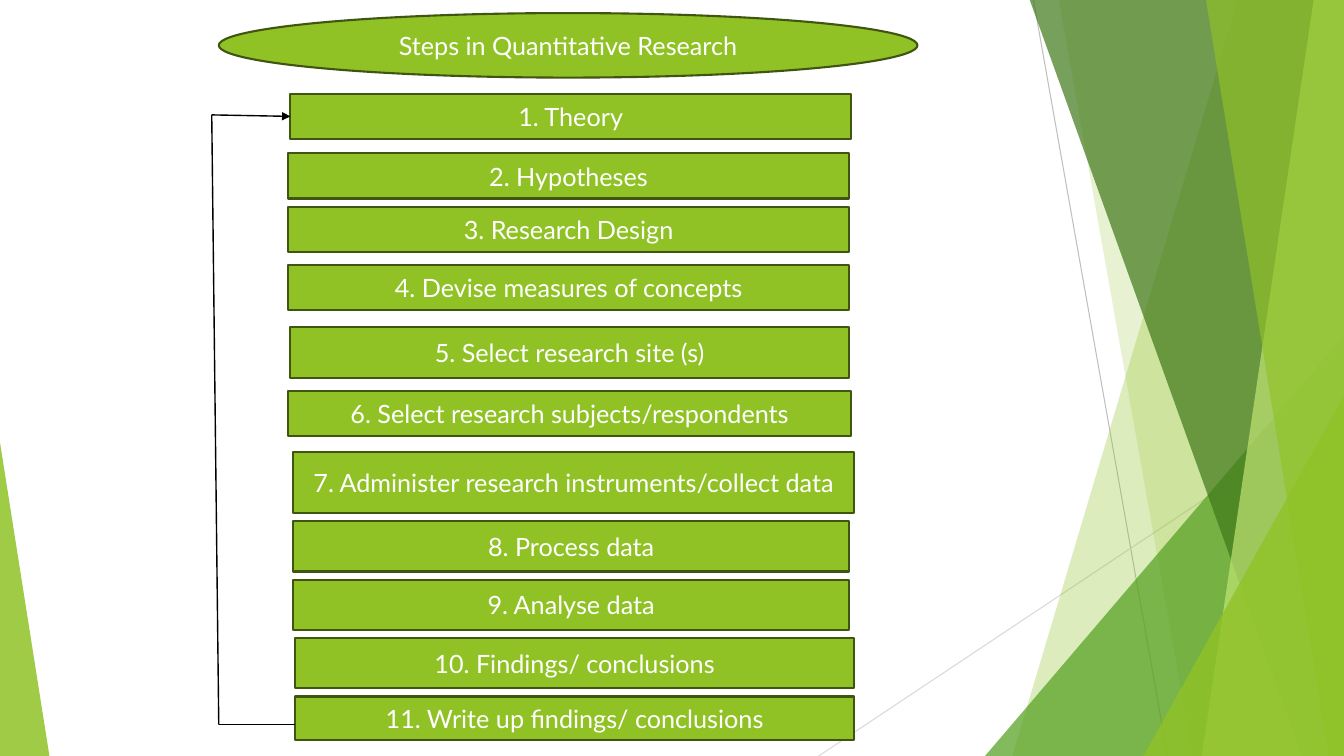
from lxml import etree
from pptx import Presentation
from pptx.dml.color import RGBColor
from pptx.enum.shapes import MSO_CONNECTOR, MSO_SHAPE
from pptx.enum.text import MSO_ANCHOR, PP_ALIGN
from pptx.oxml.ns import qn
from pptx.util import Inches, Pt

# Grid: 1333 columns by 750 rows, each cell a hundredth of an inch
CELL = Inches(0.01)
COLUMNS, ROWS = 1333, 750

COLORS = {
    "lime": "90C226", "green": "54A021", "forest": "3F7819", "pale": "C0E474",
    "outline": "3F5511", "text": "FFFFFF", "arrow": "000000",
    "steep ray": "BFBFBF", "low ray": "D9D9D9",
}
FONT = "Lato"

TITLE = ("Steps in Quantitative Research", (217, 13, 693, 64))

# Step, then left, top, width, height
STEPS = [
    ("1. Theory", (288, 93, 556, 45)),
    ("2. Hypotheses", (286, 152, 556, 45)),
    ("3. Research Design", (286, 205, 556, 45)),
    ("4. Devise measures of concepts", (286, 263, 556, 45)),
    ("5. Select research site (s)", (288, 324, 554, 51)),
    ("6. Select research subjects/respondents", (286, 388, 558, 45)),
    ("7. Administer research instruments/collect data", (291, 448, 556, 61)),
    ("8. Process data", (291, 517, 551, 50)),
    ("9. Analyse data", (291, 575, 551, 50)),
    ("10. Findings/ conclusions", (293, 633, 554, 50)),
    ("11. Write up findings/ conclusions", (293, 691, 554, 43)),
]

# Start, end, colour
RAYS = [
    ((1025, 0), (1158, ROWS), "steep ray"),
    ((COLUMNS, 403), (812, ROWS), "low ray"),
]

# Bands reach the right edge: (kind, top column, bottom column, colour, opacity)
# Triangles stand on the bottom edge: (kind, left, top, width, apex, colour, opacity)
FACETS = [
    ("band", 1228, 1004, "lime", 30),
    ("band", 1050, 1183, "lime", 20),
    ("triangle", 977, 333, 356, 1, "green", 72),
    ("band", 1021, 1291, "forest", 70),
    ("band", 1303, 1192, "pale", 70),
    ("band", 1196, 1318, "lime", 65),
    ("triangle", 1134, 393, 199, 1, "lime", 80),
    ("triangle", 0, 439, 49, 0, "lime", 85),
]

# Corners of the loop from the last step back to the first
LOOP_TOP, LOOP_BOTTOM, LOOP_END = (210, 114), (217, 719), (293, 719)


def rgb(name):
    return RGBColor.from_string(COLORS[name])


def cells(*counts):
    return [count * CELL for count in counts]


def paint(shape, color, opacity=100):
    shape.shadow.inherit = False
    shape.fill.solid()
    shape.fill.fore_color.rgb = rgb(color)
    if opacity < 100:
        fill_color = shape.fill._xPr.find(qn("a:solidFill"))[0]
        etree.SubElement(fill_color, qn("a:alpha"), val=str(opacity * 1000))


def add_band(page, top, bottom, color, opacity):
    builder = page.shapes.build_freeform(top, -1, scale=CELL)
    builder.add_line_segments([(COLUMNS, -1), (COLUMNS, ROWS), (bottom, ROWS)], close=True)
    band = builder.convert_to_shape()
    paint(band, color, opacity)
    band.line.fill.background()


def add_triangle(page, left, top, width, apex, color, opacity):
    triangle = page.shapes.add_shape(
        MSO_SHAPE.ISOSCELES_TRIANGLE, *cells(left, top, width, ROWS - top))
    triangle.adjustments[0] = apex
    paint(triangle, color, opacity)
    triangle.line.fill.background()


def add_line(page, start, end, color, width, arrow=False):
    line = page.shapes.add_connector(MSO_CONNECTOR.STRAIGHT, *cells(*start, *end))
    line.line.color.rgb = rgb(color)
    line.line.width = Pt(width)
    if arrow:
        etree.SubElement(line.line._get_or_add_ln(), qn("a:tailEnd"), type="triangle")
    etree.SubElement(line._element.spPr, qn("a:effectLst"))
    return line


def write(shape, text, size=18, color="text", align=PP_ALIGN.CENTER):
    frame = shape.text_frame
    frame.word_wrap = True
    frame.vertical_anchor = MSO_ANCHOR.MIDDLE
    para = frame.paragraphs[0]
    para.alignment = align
    span = para.add_run()
    span.text = text
    span.font.name = FONT
    span.font.size = Pt(size)
    span.font.color.rgb = rgb(color)


def add_box(page, kind, text, place):
    box = page.shapes.add_shape(kind, *cells(*place))
    paint(box, "lime")
    box.line.color.rgb = rgb("outline")
    box.line.width = Pt(1.5)
    write(box, text)
    return box


def main():
    deck = Presentation()
    deck.slide_width, deck.slide_height = cells(COLUMNS, ROWS)
    page = deck.slides.add_slide(deck.slide_layouts[6])

    # Backdrop of rays and facets
    for start, end, color in RAYS:
        add_line(page, start, end, color, 0.75)
    for kind, *facet in FACETS:
        if kind == "band":
            add_band(page, *facet)
        else:
            add_triangle(page, *facet)

    # Title and steps
    add_box(page, MSO_SHAPE.OVAL, *TITLE)
    boxes = [add_box(page, MSO_SHAPE.RECTANGLE, *step) for step in STEPS]

    # Loop back to the first step
    first = STEPS[0][1]
    arrow = add_line(page, LOOP_TOP, (first[0], 115), "arrow", 1, arrow=True)
    arrow.end_connect(boxes[0], 1)
    add_line(page, LOOP_TOP, LOOP_BOTTOM, "arrow", 1)
    add_line(page, LOOP_BOTTOM, LOOP_END, "arrow", 1)

    deck.save("out.pptx")


if __name__ == "__main__":
    main()
